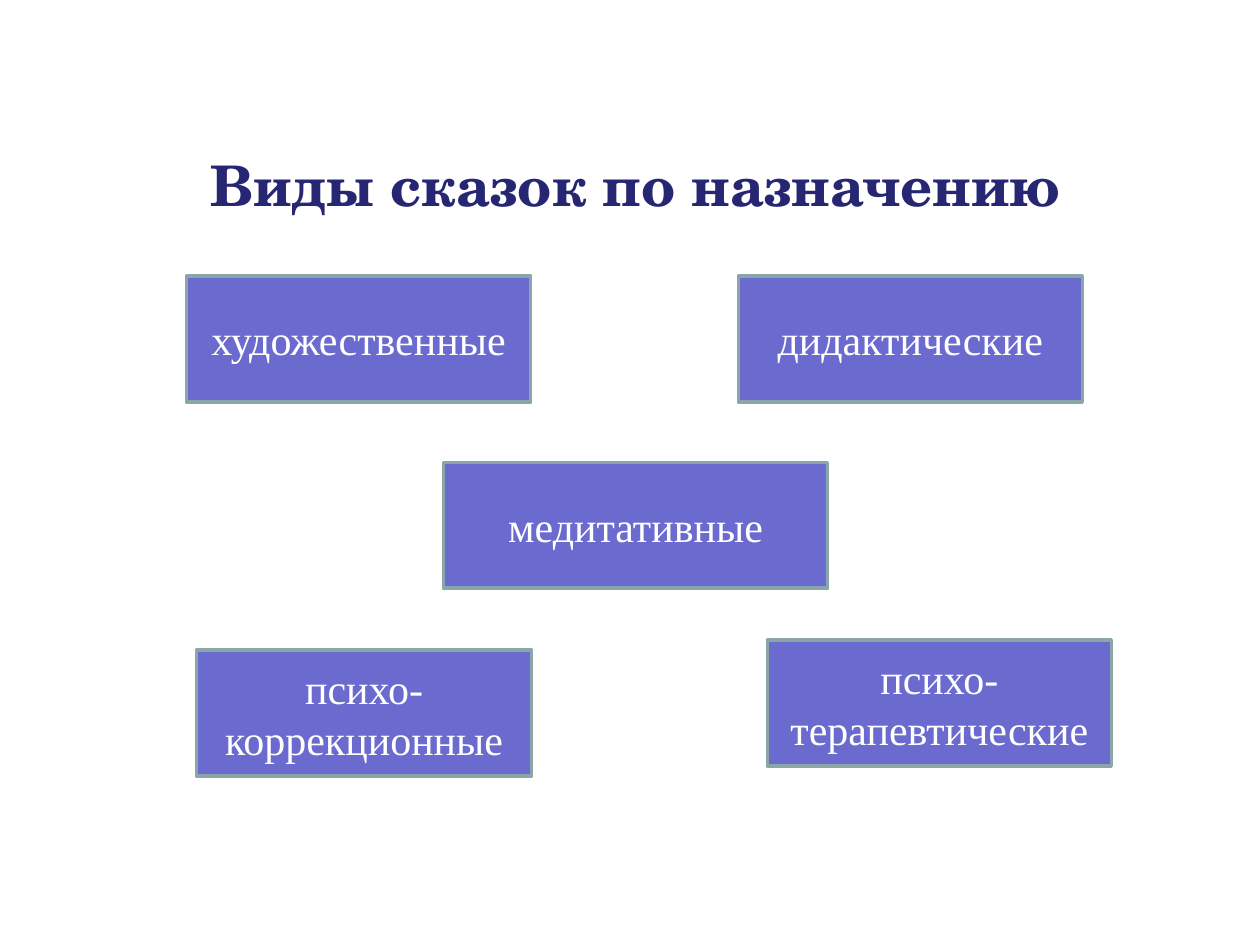
from dataclasses import dataclass

from pptx import Presentation
from pptx.dml.color import RGBColor
from pptx.enum.shapes import MSO_SHAPE
from pptx.enum.text import MSO_ANCHOR, MSO_AUTO_SIZE, PP_ALIGN
from pptx.slide import Slide
from pptx.util import Pt

RECTANGLE = MSO_SHAPE.RECTANGLE
MIDDLE, BOTTOM = MSO_ANCHOR.MIDDLE, MSO_ANCHOR.BOTTOM
CENTER, LEFT = PP_ALIGN.CENTER, PP_ALIGN.LEFT
NO_AUTOFIT = MSO_AUTO_SIZE.NONE

COLORS = {"title": "262673", "box": "6B6BCF", "border": "8AA6A8", "label": "FFFFFF"}
TITLE_FONT, LABEL_FONT = "TeX Gyre Schola", "Times New Roman"
BOX_HEIGHT = 72
TOP_ROW = 157.7


@dataclass
class KindBox:
    """One kind of fairy tale; lengths in points."""
    lines: tuple[str, ...]
    left: float
    top: float
    width: float = 196.6


KINDS = [
    KindBox(("художественные",), 106.6, TOP_ROW),
    KindBox(("психо-", "коррекционные"), 112.3, 371.5, 191.5),
    KindBox(("медитативные",), 253.4, 264.2, 219.6),
    KindBox(("психо-", "терапевтические"), 438.5, 365.8),
    KindBox(("дидактические",), 421.9, TOP_ROW),
]


def color(name: str) -> RGBColor:
    return RGBColor.from_string(COLORS[name])


def add_run(paragraph, text: str, font_name: str, size: float,
            color_name: str, bold: bool = False) -> None:
    run = paragraph.add_run()
    run.text = text
    run.font.name = font_name
    run.font.size = Pt(size)
    run.font.bold = bold
    run.font.color.rgb = color(color_name)


def set_title(slide: Slide, text: str) -> None:
    title = slide.shapes.title
    title.left, title.top = Pt(113), Pt(21.6)
    title.width, title.height = Pt(590.4), Pt(113)
    frame = title.text_frame
    frame.word_wrap = True
    frame.auto_size = NO_AUTOFIT
    frame.vertical_anchor = BOTTOM
    frame.margin_bottom = Pt(10)
    paragraph = frame.paragraphs[0]
    paragraph.alignment = LEFT
    add_run(paragraph, text, TITLE_FONT, 32, "title", bold=True)


def add_kind_box(slide: Slide, kind: KindBox) -> None:
    shape = slide.shapes.add_shape(
        RECTANGLE, Pt(kind.left), Pt(kind.top), Pt(kind.width), Pt(BOX_HEIGHT))
    shape.shadow.inherit = False
    shape.fill.solid()
    shape.fill.fore_color.rgb = color("box")
    shape.line.color.rgb = color("border")
    shape.line.width = Pt(2)
    frame = shape.text_frame
    frame.word_wrap = True
    frame.vertical_anchor = MIDDLE
    for index, line in enumerate(kind.lines):
        paragraph = frame.add_paragraph() if index else frame.paragraphs[0]
        paragraph.alignment = CENTER
        add_run(paragraph, line, LABEL_FONT, 24, "label")


def main() -> None:
    presentation = Presentation()
    presentation.slide_width, presentation.slide_height = Pt(720), Pt(540)
    slide = presentation.slides.add_slide(presentation.slide_layouts[5])

    # Heading
    set_title(slide, "Виды сказок по назначению")

    # Kinds of fairy tales
    for kind in KINDS:
        add_kind_box(slide, kind)

    presentation.save("out.pptx")


if __name__ == "__main__":
    main()
